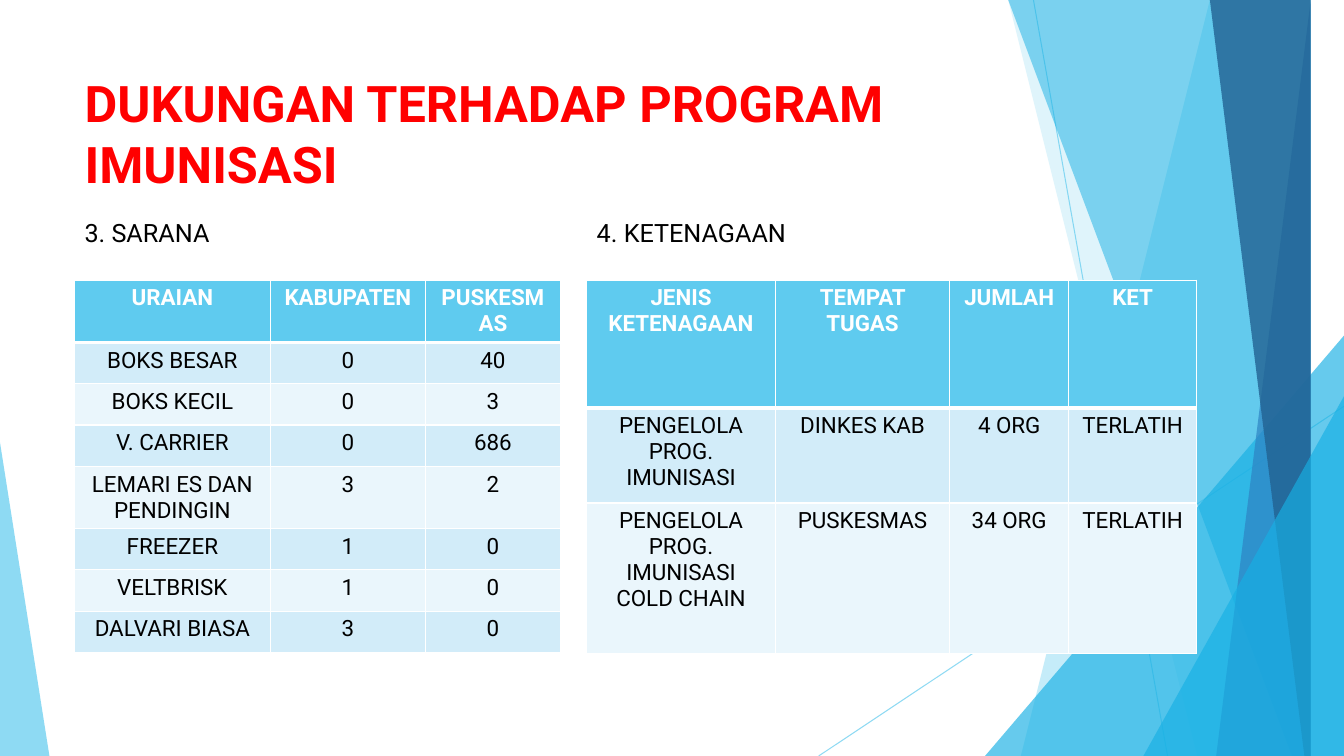
import pptx
import pptx.util
import pptx.dml.color
import pptx.enum.shapes
import pptx.enum.text
import pptx.oxml
import pptx.oxml.ns
import lxml.etree

Inches = pptx.util.Inches
Pt = pptx.util.Pt
WIDTH, HEIGHT = 13.33, 7.5
LEFT_COLUMN, RIGHT_COLUMN = 0.74, 5.82
LABEL_TOP, TABLE_TOP = 2.11, 2.78
FONT = "Roboto"
COLORS = {
    "sky": "5FCBEF", "cyan": "17B0E4", "blue": "2E83C3", "navy": "226292",
    "band_dark": "D2ECF9", "band_light": "EAF6FC",
    "red": "FF0000", "black": "000000", "white": "FFFFFF",
}


def paint(format_fill, color, opacity=100):
    """Solid fill, with an optional opacity in percent."""
    format_fill.solid()
    format_fill.fore_color.rgb = pptx.dml.color.RGBColor.from_string(COLORS[color])
    if opacity < 100:
        color_element = format_fill._xPr.find(".//" + pptx.oxml.ns.qn("a:srgbClr"))
        alpha = lxml.etree.SubElement(color_element, pptx.oxml.ns.qn("a:alpha"))
        alpha.set("val", str(opacity * 1000))


def write(text_frame, text, size, color, bold=False, align=pptx.enum.text.PP_ALIGN.LEFT):
    """One formatted run in the first paragraph."""
    text_frame.word_wrap = True
    paragraph = text_frame.paragraphs[0]
    paragraph.alignment = align
    run = paragraph.add_run()
    run.text = text
    run.font.name, run.font.size, run.font.bold = FONT, Pt(size), bold
    run.font.color.rgb = pptx.dml.color.RGBColor.from_string(COLORS[color])


presentation = pptx.Presentation()
presentation.slide_width = Inches(WIDTH)
presentation.slide_height = Inches(HEIGHT)
slide = presentation.slides.add_slide(presentation.slide_layouts[5])

# Thin crossing lines
for start_x, start_y, end_x in [(10.25, 0, 11.58), (WIDTH, 4.03, 8.12)]:
    line = slide.shapes.add_connector(
        pptx.enum.shapes.MSO_CONNECTOR.STRAIGHT,
        Inches(start_x), Inches(start_y), Inches(end_x), Inches(HEIGHT))
    line.line.width = Pt(0.75)
    paint(line.line.fill, "sky", 70)
    lxml.etree.SubElement(line._element.spPr, pptx.oxml.ns.qn("a:effectLst"))

# Facets from back to front: a band runs from its top x and bottom x to the
# right edge; a triangle has left, top, width and the place of its tip
facets = [
    ("band", (12.28, 10.04), "sky", 36),
    ("band", (10.5, 11.83), "sky", 20),
    ("triangle", (9.77, 3.33, 3.56, 1), "cyan", 66),
    ("band", (10.21, 12.91), "cyan", 50),
    ("band", (13.03, 11.92), "blue", 70),
    ("band", (11.96, 13.18), "navy", 80),
    ("triangle", (11.34, 3.93, 1.99, 1), "cyan", 66),
    ("triangle", (0, 4.39, 0.49, 0), "sky", 70),
]
for kind, geometry, color, opacity in facets:
    if kind == "band":
        top_x, bottom_x = geometry
        builder = slide.shapes.build_freeform(top_x, 0, scale=Inches(1))
        builder.add_line_segments([(WIDTH, 0), (WIDTH, HEIGHT), (bottom_x, HEIGHT)])
        shape = builder.convert_to_shape()
    else:
        left, top, width, tip = geometry
        shape = slide.shapes.add_shape(
            pptx.enum.shapes.MSO_SHAPE.ISOSCELES_TRIANGLE,
            Inches(left), Inches(top), Inches(width), Inches(HEIGHT - top))
        shape.adjustments[0] = tip
    shape.shadow.inherit = False
    shape.line.fill.background()
    paint(shape.fill, color, opacity)

# Title, in front of the facets
title = slide.shapes.title
slide.shapes._spTree.append(title._element)
title.left, title.top = Inches(LEFT_COLUMN), Inches(0.67)
title.width, title.height = Inches(9.4), Inches(1.44)
title.text_frame.vertical_anchor = pptx.enum.text.MSO_ANCHOR.TOP
write(title.text_frame, "DUKUNGAN TERHADAP PROGRAM IMUNISASI", 36, "red", True)

# Tables: left, column widths, row heights, rows of text
tables = [
    (LEFT_COLUMN, [1.94, 1.54, 1.34], [0.41] * 8, [
        ["URAIAN", "KABUPATEN", "PUSKESMAS"],
        ["BOKS BESAR", "0", "40"],
        ["BOKS KECIL", "0", "3"],
        ["V. CARRIER", "0", "686"],
        ["LEMARI ES DAN PENDINGIN", "3", "2"],
        ["FREEZER", "1", "0"],
        ["VELTBRISK", "1", "0"],
        ["DALVARI BIASA", "3", "0"],
    ]),
    (RIGHT_COLUMN, [1.87, 1.73, 1.18, 1.27], [1.27, 0.94, 1.49], [
        ["JENIS KETENAGAAN", "TEMPAT TUGAS", "JUMLAH", "KET"],
        ["PENGELOLA PROG. IMUNISASI", "DINKES KAB", "4 ORG", "TERLATIH"],
        ["PENGELOLA PROG. IMUNISASI COLD CHAIN", "PUSKESMAS", "34 ORG", "TERLATIH"],
    ]),
]
for left, widths, heights, rows in tables:
    table = slide.shapes.add_table(
        len(rows), len(widths), Inches(left), Inches(TABLE_TOP),
        Inches(sum(widths)), Inches(sum(heights))).table
    for column, width in zip(table.columns, widths):
        column.width = Inches(width)
    for row_index, texts in enumerate(rows):
        table.rows[row_index].height = Inches(heights[row_index])
        header = row_index == 0
        band = "sky" if header else ("band_light", "band_dark")[row_index % 2]
        for column_index, text in enumerate(texts):
            cell = table.cell(row_index, column_index)
            paint(cell.fill, band)
            write(cell.text_frame, text, 16, "white" if header else "black",
                  header, pptx.enum.text.PP_ALIGN.CENTER)
            # White borders, thick between header and body
            thick_side = {0: "lnB", 1: "lnT"}.get(row_index)
            for position, side in enumerate(["lnL", "lnR", "lnT", "lnB"]):
                border = pptx.oxml.parse_xml(
                    f'<a:{side} {pptx.oxml.ns.nsdecls("a")} '
                    f'w="{Pt(3 if side == thick_side else 1)}"><a:solidFill>'
                    f'<a:srgbClr val="{COLORS["white"]}"/></a:solidFill></a:{side}>')
                cell._tc.get_or_add_tcPr().insert(position, border)

# Table labels
for left, width, text in [(LEFT_COLUMN, 4.57, "3. SARANA"),
                          (RIGHT_COLUMN, 5.79, "4. KETENAGAAN")]:
    label = slide.shapes.add_textbox(
        Inches(left), Inches(LABEL_TOP), Inches(width), Inches(0.4))
    write(label.text_frame, text, 18, "black")

presentation.save("out.pptx")
